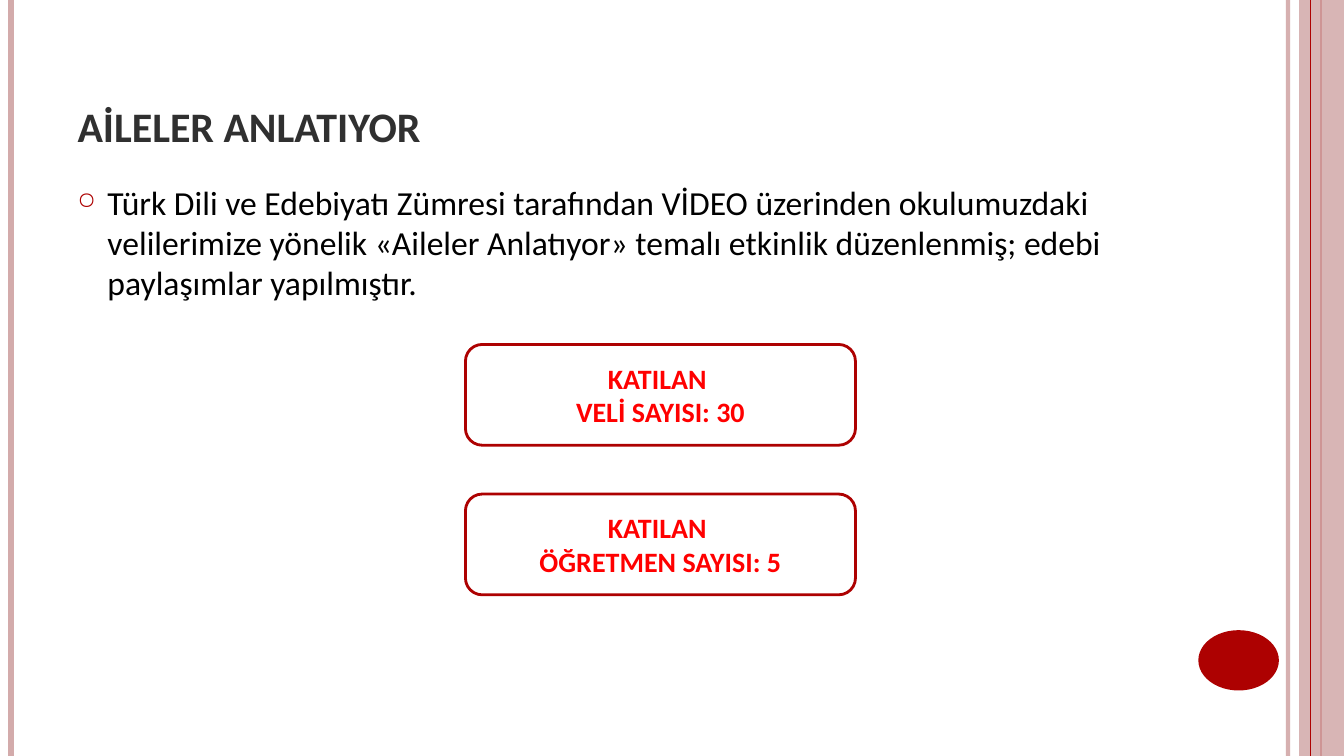
from lxml import etree
from pptx import Presentation
from pptx.dml.color import RGBColor
from pptx.enum.shapes import MSO_CONNECTOR, MSO_SHAPE
from pptx.enum.text import MSO_ANCHOR, MSO_AUTO_SIZE, PP_ALIGN
from pptx.oxml.ns import qn
from pptx.util import Cm, Pt

STRAIGHT = MSO_CONNECTOR.STRAIGHT
RECTANGLE, OVAL, ROUNDED = MSO_SHAPE.RECTANGLE, MSO_SHAPE.OVAL, MSO_SHAPE.ROUNDED_RECTANGLE
TOP, MIDDLE, BOTTOM = MSO_ANCHOR.TOP, MSO_ANCHOR.MIDDLE, MSO_ANCHOR.BOTTOM
LEFT, CENTER = PP_ALIGN.LEFT, PP_ALIGN.CENTER

WHITE = RGBColor(0xFF, 0xFF, 0xFF)
BLACK = RGBColor(0x00, 0x00, 0x00)
CHARCOAL = RGBColor(0x30, 0x30, 0x30)
PINK = RGBColor(0xD3, 0xAB, 0xAB)
DARK_RED = RGBColor(0xAD, 0x01, 0x01)
RED = RGBColor(0xFF, 0x00, 0x00)

WIDTH, HEIGHT = Cm(33.87), Cm(19.05)


def set_opacity(shape, percent):
    color = next(shape._element.spPr.iter(qn("a:srgbClr")))
    etree.SubElement(color, qn("a:alpha"), val=str(percent * 1000))


def format_text(text_frame, size, color, bold, alignment, anchor):
    text_frame.word_wrap = True
    text_frame.auto_size = MSO_AUTO_SIZE.NONE
    text_frame.vertical_anchor = anchor
    for paragraph in text_frame.paragraphs:
        paragraph.alignment = alignment
        for run in paragraph.runs:
            run.font.name = "Calibri"
            run.font.size = Pt(size)
            run.font.bold = bold
            run.font.color.rgb = color


presentation = Presentation()
presentation.slide_width, presentation.slide_height = WIDTH, HEIGHT
slide = presentation.slides.add_slide(presentation.slide_layouts[5])
shapes = slide.shapes

# Vertical lines at the edges, with the wide band over the third one
for x, color, weight, opacity in [
    (32.46, PINK, 3, 93),
    (0.28, PINK, 4.5, 100),
    (33.3, DARK_RED, 1.5, 100),
    (33.02, DARK_RED, 0.75, 100),
]:
    if weight == 0.75:
        band = shapes.add_shape(RECTANGLE, Cm(32.74), 0, WIDTH - Cm(32.74), HEIGHT)
        band.shadow.inherit = False
        band.fill.solid()
        band.fill.fore_color.rgb = PINK
        band.line.fill.background()
        set_opacity(band, 87)
    line = shapes.add_connector(STRAIGHT, Cm(x), 0, Cm(x), HEIGHT)
    line.line.color.rgb = color
    line.line.width = Pt(weight)
    if opacity < 100:
        set_opacity(line, opacity)
    etree.SubElement(line._element.spPr, qn("a:effectLst"))

# Page marker
marker = shapes.add_shape(OVAL, Cm(30.2), Cm(15.88), Cm(2.03), Cm(1.52))
marker.shadow.inherit = False
marker.fill.solid()
marker.fill.fore_color.rgb = DARK_RED
marker.line.fill.background()

# Title
title = shapes.title
title.left, title.top, title.width, title.height = Cm(1.7), Cm(0.76), Cm(27.66), Cm(3.18)
title.text_frame.text = "AİLELER ANLATIYOR"
format_text(title.text_frame, 30, CHARCOAL, True, LEFT, BOTTOM)

# Bulleted description
body = shapes.add_textbox(Cm(1.7), Cm(4.45), Cm(27.66), Cm(13.54))
body.text_frame.text = (
    "Türk Dili ve Edebiyatı Zümresi tarafından VİDEO üzerinden okulumuzdaki "
    "velilerimize yönelik «Aileler Anlatıyor» temalı etkinlik düzenlenmiş; "
    "edebi paylaşımlar yapılmıştır."
)
format_text(body.text_frame, 24, BLACK, False, LEFT, TOP)
paragraph = body.text_frame.paragraphs[0]
paragraph.space_before = Pt(6)
properties = paragraph._p.get_or_add_pPr()
properties.set("marL", str(Cm(0.76)))
properties.set("indent", str(-Cm(0.76)))
bullet_color = etree.SubElement(properties, qn("a:buClr"))
etree.SubElement(bullet_color, qn("a:srgbClr"), val=str(DARK_RED))
etree.SubElement(properties, qn("a:buSzPct"), val="70000")
etree.SubElement(properties, qn("a:buChar"), char="○")

# Attendance boxes
for index, count in enumerate(["VELİ SAYISI: 30", "ÖĞRETMEN SAYISI: 5"]):
    box = shapes.add_shape(ROUNDED, Cm(11.73), Cm(8.68 + 3.77 * index), Cm(9.83), Cm(2.54))
    box.shadow.inherit = False
    box.fill.solid()
    box.fill.fore_color.rgb = WHITE
    box.line.color.rgb = DARK_RED
    box.line.width = Pt(2)
    box.text_frame.text = "KATILAN \n" + count
    format_text(box.text_frame, 20, RED, True, CENTER, MIDDLE)

presentation.save("out.pptx")
